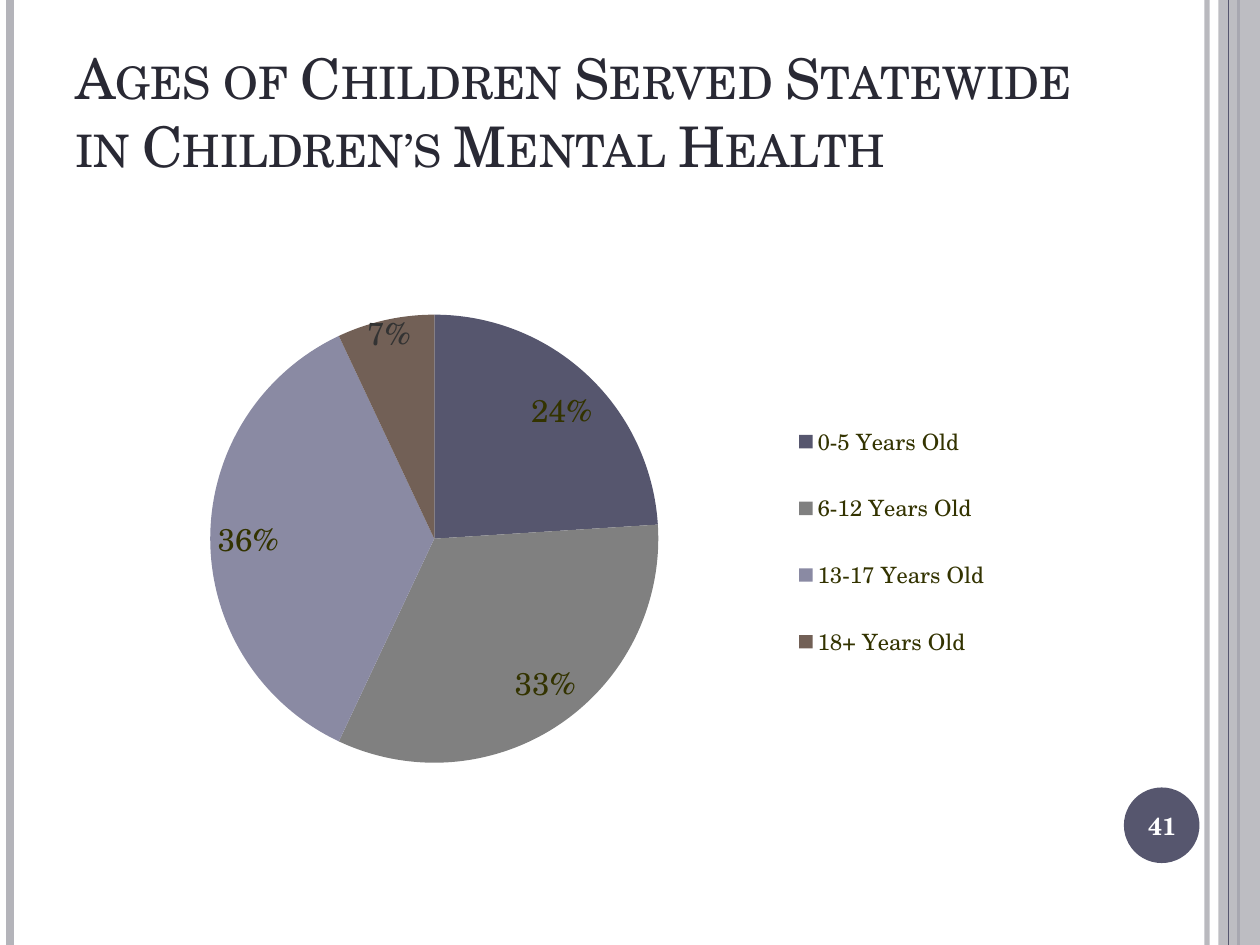
from lxml import etree
from pptx import Presentation
from pptx.chart.data import CategoryChartData
from pptx.dml.color import RGBColor
from pptx.enum.chart import XL_CHART_TYPE, XL_LABEL_POSITION, XL_LEGEND_POSITION
from pptx.enum.shapes import MSO_CONNECTOR, MSO_SHAPE
from pptx.enum.text import MSO_ANCHOR, PP_ALIGN
from pptx.oxml import parse_xml
from pptx.oxml.ns import nsdecls, qn
from pptx.util import Inches, Pt

PIE = XL_CHART_TYPE.PIE
INSIDE_END = XL_LABEL_POSITION.INSIDE_END
RIGHT = XL_LEGEND_POSITION.RIGHT
STRAIGHT = MSO_CONNECTOR.STRAIGHT
RECT, OVAL = MSO_SHAPE.RECTANGLE, MSO_SHAPE.OVAL
TOP, MIDDLE = MSO_ANCHOR.TOP, MSO_ANCHOR.MIDDLE
LEFT, CENTER = PP_ALIGN.LEFT, PP_ALIGN.CENTER

WIDTH, HEIGHT = 10, 7.5
FONT = "TeX Gyre Schola"
COLORS = {
    "slate": "56566E", "gray": "808080", "lavender": "8A8AA3", "brown": "726056",
    "band": "B4B4BA", "olive": "333300", "ink": "292934", "char": "333333",
    "white": "FFFFFF",
}
AGES = [
    ("0-5 Years Old", 0.24, "slate"),
    ("6-12 Years Old", 0.33, "gray"),
    ("13-17 Years Old", 0.36, "lavender"),
    ("18+ Years Old", 0.07, "brown"),
]
LABEL_SHIFTS = {0: (0.01, 0.01), 1: (0.02, -0.02), 3: (-0.02, -0.03)}
RULES = [(9.58, "band", 3, 93), (0.08, "band", 4.5, 100), (9.83, "slate", 1.5, 100)]


def rgb(name):
    return RGBColor.from_string(COLORS[name])


def set_alpha(fill, percent):
    color = fill.find(".//" + qn("a:srgbClr"))
    etree.SubElement(color, qn("a:alpha")).set("val", str(percent * 1000))


def set_font(font, size, color, bold=False):
    font.name, font.size, font.bold = FONT, Pt(size), bold
    font.color.rgb = rgb(color)


def add_rule(s, x, color, weight, alpha=100):
    line = s.shapes.add_connector(STRAIGHT, Inches(x), 0, Inches(x), Inches(HEIGHT))
    line.line.color.rgb = rgb(color)
    line.line.width = Pt(weight)
    sp_pr = line._element.spPr
    set_alpha(sp_pr.find(qn("a:ln")), alpha)
    etree.SubElement(sp_pr, qn("a:effectLst"))


def add_block(s, kind, box, color, alpha=100):
    sp = s.shapes.add_shape(kind, *map(Inches, box))
    sp.shadow.inherit = False
    sp.fill.solid()
    sp.fill.fore_color.rgb = rgb(color)
    sp.line.fill.background()
    set_alpha(sp._element.spPr.find(qn("a:solidFill")), alpha)


def add_text(s, text, box, size, color, bold=False, align=LEFT, anchor=TOP, small_caps=False):
    tf = s.shapes.add_textbox(*map(Inches, box)).text_frame
    tf.word_wrap = True
    tf.vertical_anchor = anchor
    p = tf.paragraphs[0]
    p.alignment = align
    r = p.add_run()
    r.text = text
    set_font(r.font, size, color, bold)
    if small_caps:
        r.font._element.set("cap", "small")


def set_layout(parent, index, place, modes=""):
    for old in parent.findall(qn("c:layout")):
        parent.remove(old)
    sizes = "".join(f'<c:{k} val="{v}"/>' for k, v in zip("xywh", place))
    parent.insert(index, parse_xml(
        f'<c:layout {nsdecls("c")}><c:manualLayout>{modes}{sizes}'
        f'</c:manualLayout></c:layout>'))


def shift_label(series, i, shift):
    label = series.points[i].data_label
    if i == len(AGES) - 1:
        r = label.text_frame.paragraphs[0].add_run()
        r.text = "7%"
        set_font(r.font, 18, "char")
    else:
        set_font(label.font, 18, "olive")
    label.position = INSIDE_END
    d_lbl = series._element.find(f'.//{qn("c:dLbl")}[{qn("c:idx")}][last()]')
    for d_lbl in series._element.iter(qn("c:dLbl")):
        if d_lbl.find(qn("c:idx")).get("val") == str(i):
            set_layout(d_lbl, 1, shift)


def add_pie(s, box):
    data = CategoryChartData(number_format="0%")
    data.categories = [name for name, _, _ in AGES]
    data.add_series("Series 1", [share for _, share, _ in AGES])
    chart = s.shapes.add_chart(PIE, *map(Inches, box), data).chart
    chart.has_title = False
    set_font(chart.font, 18, "olive")

    edges = '<c:xMode val="edge"/><c:yMode val="edge"/>'
    chart.has_legend = True
    legend = chart.legend
    legend.position = RIGHT
    legend.include_in_layout = False
    set_font(legend.font, 12.8, "olive")
    set_layout(legend._element, 1, (0.63, 0.2, 0.26, 0.51), edges)

    plot = chart.plots[0]
    plot.vary_by_categories = True
    set_layout(plot._element.getparent(), 0, (0.07, 0.07, 0.46, 0.76),
               '<c:layoutTarget val="inner"/>' + edges)
    series = plot.series[0]
    labels = series.data_labels
    labels.show_value = True
    labels.number_format, labels.number_format_is_linked = "0%", False
    labels.position = INSIDE_END
    set_font(labels.font, 18, "olive")
    for i, (_, _, color) in enumerate(AGES):
        fill = series.points[i].format.fill
        fill.solid()
        fill.fore_color.rgb = rgb(color)
    for i, shift in LABEL_SHIFTS.items():
        shift_label(series, i, shift)


def main():
    prs = Presentation()
    prs.slide_width, prs.slide_height = Inches(WIDTH), Inches(HEIGHT)
    s = prs.slides.add_slide(prs.slide_layouts[6])
    for rule in RULES:
        add_rule(s, *rule)
    add_block(s, RECT, (9.67, 0, 0.33, HEIGHT), "band", alpha=87)
    add_rule(s, 9.75, "slate", 0.75)
    add_block(s, OVAL, (8.92, 6.25, 0.6, 0.6), "slate")
    add_pie(s, (1.08, 2.17, 7.89, 4.68))
    add_text(s, "Ages of Children Served Statewide in Children’s Mental Health",
             (0.5, 0.3, 8.33, 0.7), 32, "ink", small_caps=True)
    add_text(s, "41", (8.89, 6.27, 0.67, 0.57), 14, "white",
             bold=True, align=CENTER, anchor=MIDDLE)
    prs.save("out.pptx")


if __name__ == "__main__":
    main()
